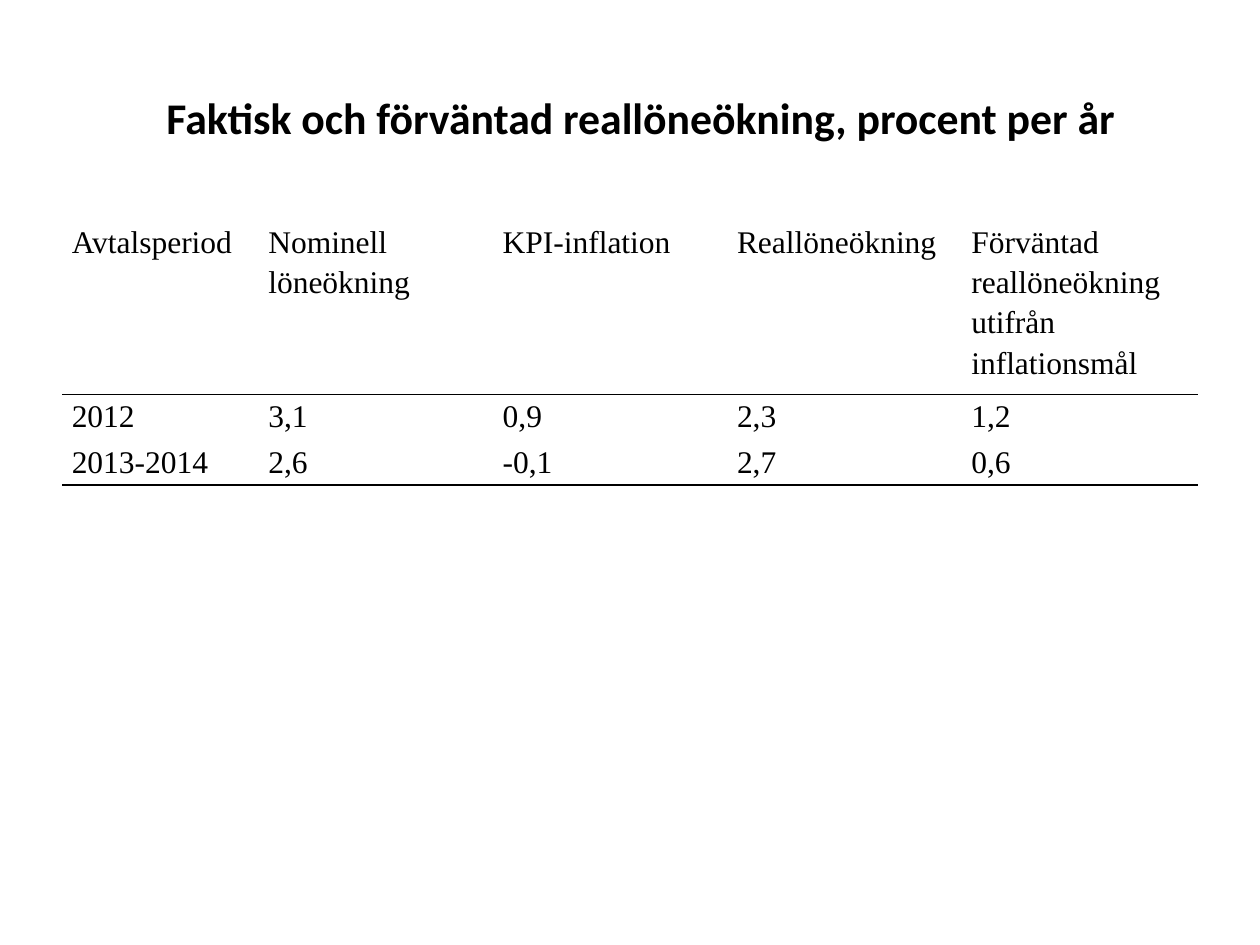
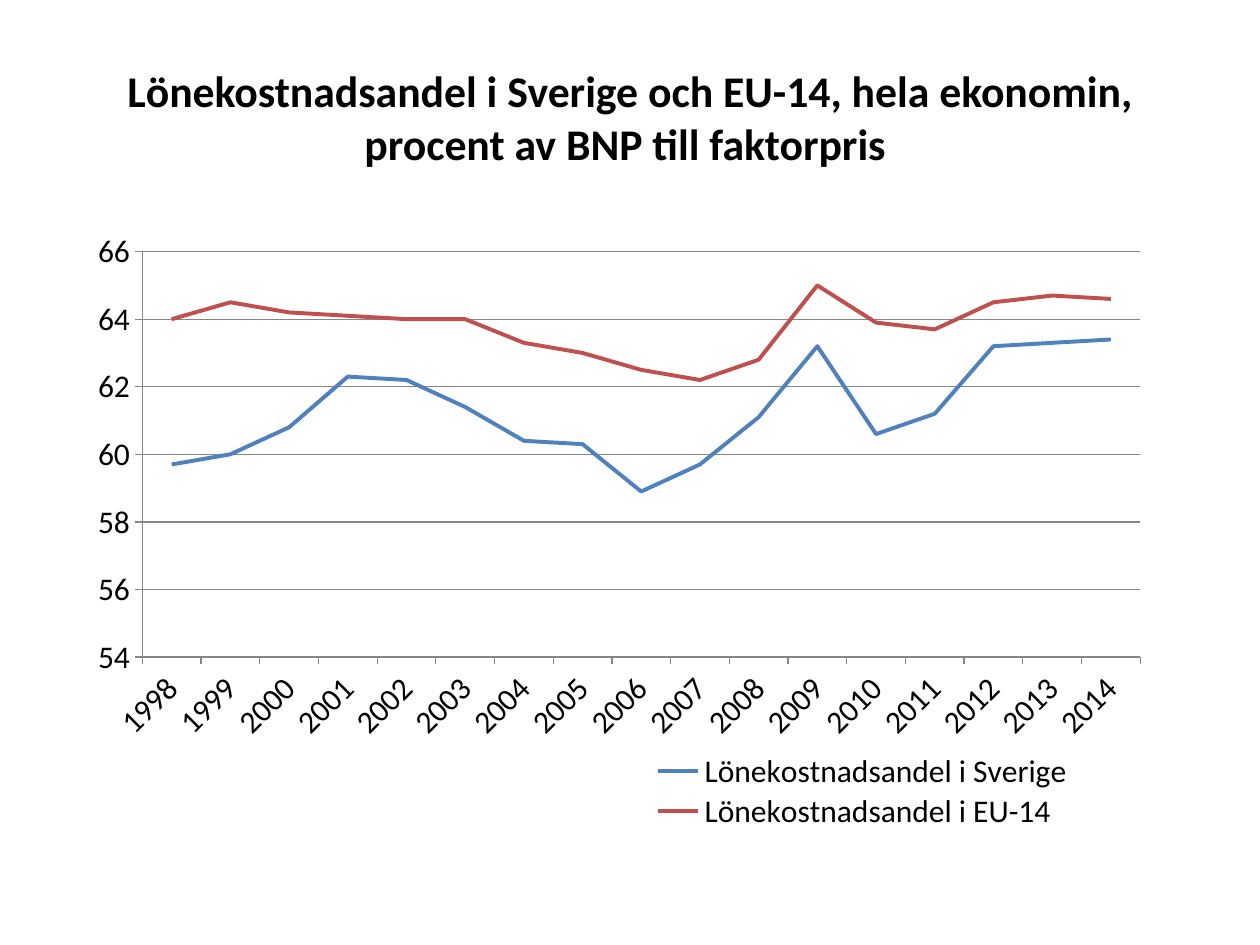
from lxml import etree
from pptx import Presentation
from pptx.chart.data import CategoryChartData
from pptx.dml.color import RGBColor
from pptx.enum.chart import XL_CHART_TYPE, XL_LEGEND_POSITION, XL_TICK_MARK
from pptx.enum.text import MSO_ANCHOR, PP_ALIGN
from pptx.oxml import parse_xml
from pptx.oxml.ns import nsdecls, qn
from pptx.util import Inches, Pt

BLACK, WHITE, GREY = "000000", "FFFFFF", "868686"
BLUE, RED = "4F81BD", "C0504D"


def color(code):
    return RGBColor.from_string(code)


def layout(x, y, w, h, inner=False):
    """Manual chart layout, as fractions of the chart area."""
    target = '<c:layoutTarget val="inner"/>' if inner else ""
    sizes = "".join(f'<c:{k} val="{v}"/>' for k, v in zip("xywh", (x, y, w, h)))
    return parse_xml(
        f'<c:layout {nsdecls("c")}><c:manualLayout>{target}'
        '<c:xMode val="edge"/><c:yMode val="edge"/>'
        f"{sizes}</c:manualLayout></c:layout>")


class Deck:
    sans, serif = "Calibri", "Times New Roman"
    head, body = Pt(25), Pt(18)
    left, top, width = Inches(0.5), Inches(1.75), Inches(9)

    def __init__(self):
        self.prs = Presentation()
        self.prs.slide_width, self.prs.slide_height = Inches(10), Inches(7.5)
        self.slide = None

    def style(self, font, name, size, bold=None):
        font.name, font.size, font.bold = name, size, bold
        font.color.rgb = color(BLACK)

    def start(self, title, width=width):
        self.slide = self.prs.slides.add_slide(self.prs.slide_layouts[6])
        box = self.slide.shapes.add_textbox(
            self.left, Inches(0.3), width, Inches(1.25))
        frame = box.text_frame
        frame.word_wrap = True
        frame.vertical_anchor = MSO_ANCHOR.MIDDLE
        para = frame.paragraphs[0]
        para.text, para.alignment = title, PP_ALIGN.CENTER
        self.style(para.font, self.sans, self.head, True)

    def rule(self, cell, side):
        line = parse_xml(
            f'<a:{side} {nsdecls("a")} w="{Pt(1)}"><a:solidFill>'
            f'<a:srgbClr val="{BLACK}"/></a:solidFill></a:{side}>')
        cell._tc.get_or_add_tcPr().insert(0, line)

    def cell(self, cell, text):
        cell.fill.solid()
        cell.fill.fore_color.rgb = color(WHITE)
        cell.margin_left = cell.margin_right = Inches(0.07)
        cell.margin_top = cell.margin_bottom = 0
        para = cell.text_frame.paragraphs[0]
        para.text, para.line_spacing = text, 1.15
        self.style(para.font, self.serif, self.body)

    def table(self, rows, widths, heights):
        table = self.slide.shapes.add_table(
            len(rows), len(widths), self.left, self.top,
            self.width, Inches(sum(heights))).table
        table.first_row = table.horz_banding = False
        for col, width in zip(table.columns, widths):
            col.width = Inches(width)
        # Rules below the header and below the last row
        sides = {0: "lnB", 1: "lnT", len(rows) - 1: "lnB"}
        for r, texts in enumerate(rows):
            table.rows[r].height = Inches(heights[r])
            for c, text in enumerate(texts):
                cell = table.cell(r, c)
                self.cell(cell, text)
                if r in sides:
                    self.rule(cell, sides[r])

    def chart(self, cats, series):
        data = CategoryChartData()
        data.categories = cats
        for name, _, vals in series:
            data.add_series(name, vals)
        chart = self.slide.shapes.add_chart(
            XL_CHART_TYPE.LINE, self.left, self.top,
            self.width, Inches(4.95), data).chart
        chart.has_title = False
        self.style(chart.font, self.sans, self.body)
        # Lines
        plot = chart.plots[0]
        plot.vary_by_categories = False
        for line, (_, code, _) in zip(plot.series, series):
            line.smooth = False
            line.format.line.width = Pt(2.25)
            line.format.line.color.rgb = color(code)
        # Axes
        value = chart.value_axis
        value.minimum_scale, value.maximum_scale, value.major_unit = 54, 66, 2
        value.tick_labels.number_format = "General"
        value.tick_labels.number_format_is_linked = False
        value.has_major_gridlines = True
        for axis in (value, chart.category_axis):
            axis.major_tick_mark = XL_TICK_MARK.OUTSIDE
        for part in (value, chart.category_axis, value.major_gridlines):
            part.format.line.width = Pt(0.75)
            part.format.line.color.rgb = color(GREY)
        # Legend and plot positions
        chart.has_legend = True
        legend = chart.legend
        legend.position = XL_LEGEND_POSITION.RIGHT
        legend.include_in_layout = False
        area = chart._chartSpace.chart.plotArea
        for old in area.findall(qn("c:layout")):
            area.remove(old)
        area.insert(0, layout(0.07, 0.05, 0.88, 0.65, inner=True))
        for old in legend._element.findall(qn("c:layout")):
            legend._element.remove(old)
        legend._element.find(qn("c:legendPos")).addnext(
            layout(0.49, 0.85, 0.43, 0.13))


def main():
    deck = Deck()

    # Real wage table
    deck.start("Faktisk och förväntad reallöneökning, procent per år",
               Inches(9.17))
    deck.table(
        [["Avtalsperiod", "Nominell löneökning", "KPI-inflation",
          "Reallöneökning", "Förväntad reallöneökning utifrån inflationsmål"],
         ["2012", "3,1", "0,9", "2,3", "1,2"],
         ["2013-2014", "2,6", "-0,1", "2,7", "0,6"]],
        [1.56] + [1.86] * 4, [1.16, 0.36, 0.36])

    # Wage share chart
    deck.start("Lönekostnadsandel i Sverige och EU-14, hela ekonomin, "
               "procent av BNP till faktorpris ")
    deck.chart(
        [str(year) for year in range(1998, 2015)],
        [("Lönekostnadsandel i Sverige", BLUE,
          [59.7, 60, 60.8, 62.3, 62.2, 61.4, 60.4, 60.3, 58.9,
           59.7, 61.1, 63.2, 60.6, 61.2, 63.2, 63.3, 63.4]),
         ("Lönekostnadsandel i EU-14", RED,
          [64, 64.5, 64.2, 64.1, 64, 64, 63.3, 63, 62.5,
           62.2, 62.8, 65, 63.9, 63.7, 64.5, 64.7, 64.6])])

    deck.prs.save("out.pptx")


if __name__ == "__main__":
    main()
